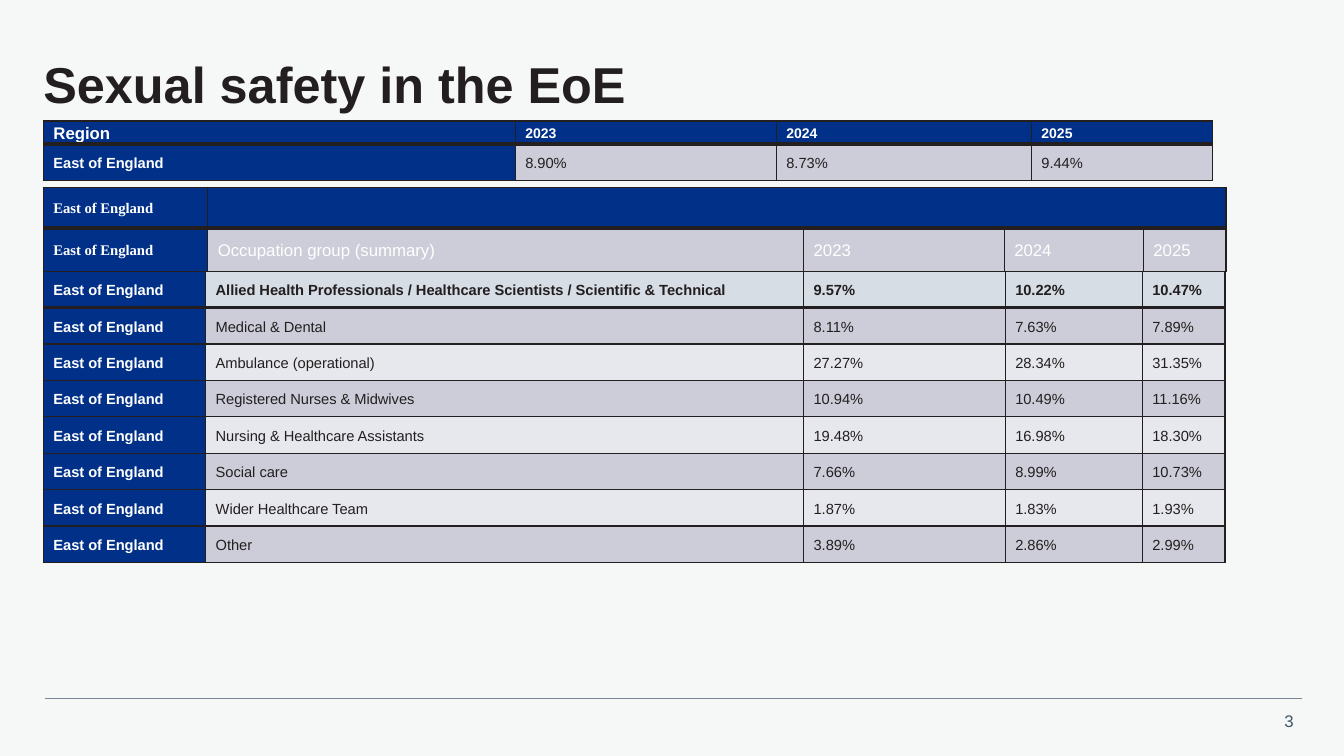
from dataclasses import dataclass

from lxml.etree import SubElement
from pptx import Presentation
from pptx.dml.color import RGBColor
from pptx.enum.shapes import MSO_CONNECTOR
from pptx.enum.text import MSO_ANCHOR, MSO_AUTO_SIZE, PP_ALIGN
from pptx.oxml import parse_xml
from pptx.oxml.ns import nsdecls, qn
from pptx.util import Inches, Pt


@dataclass(frozen=True)
class Theme:
    page: str = "F6F8F8"
    ink: str = "231F20"
    white: str = "FFFFFF"
    blue: str = "003087"
    highlight: str = "D6DDE5"
    dark_band: str = "CCCDD9"
    light_band: str = "E7E8ED"
    rule: str = "768692"
    number: str = "425563"
    font: str = "Arial"
    serif: str = "Times New Roman"
    title: float = 36
    large: float = 12
    body: float = 10.5
    small: float = 10


@dataclass(frozen=True)
class CellStyle:
    fill: str
    color: str = Theme.white
    size: float = Theme.body
    bold: bool = False
    font: str = Theme.font
    pad_y: float = 0.08
    pad_right: float = 0.1


T = Theme()
WIDTH, HEIGHT = 13.33, 7.5
LEFT = 0.43
REGION = "East of England"

REGION_CELL = CellStyle(T.blue, bold=True)
REGION_SERIF = CellStyle(T.blue, bold=True, font=T.serif)
TOP_HEAD = CellStyle(T.blue, size=T.large, bold=True, pad_y=0, pad_right=0.27)
TOP_YEAR = CellStyle(T.blue, size=T.small, bold=True, pad_y=0, pad_right=0.27)
GROUP_HEAD = CellStyle(T.dark_band, size=T.large, pad_y=0.1, pad_right=0.27)
TOP_GROUP = CellStyle(T.highlight, T.ink, bold=True)
DARK = CellStyle(T.dark_band, T.ink)
LIGHT = CellStyle(T.light_band, T.ink)

YEARS = ["2023", "2024", "2025"]
GROUPS = [
    ["Allied Health Professionals / Healthcare Scientists / Scientific & Technical",
     "9.57%", "10.22%", "10.47%"],
    ["Medical & Dental", "8.11%", "7.63%", "7.89%"],
    ["Ambulance (operational)", "27.27%", "28.34%", "31.35%"],
    ["Registered Nurses & Midwives", "10.94%", "10.49%", "11.16%"],
    ["Nursing & Healthcare Assistants", "19.48%", "16.98%", "18.30%"],
    ["Social care", "7.66%", "8.99%", "10.73%"],
    ["Wider Healthcare Team", "1.87%", "1.83%", "1.93%"],
    ["Other", "3.89%", "2.86%", "2.99%"],
]


def rgb(value):
    return RGBColor.from_string(value)


def set_font(p, size, color, bold=False, name=T.font):
    for r in p.runs:
        r.font.size, r.font.bold, r.font.name = Pt(size), bold, name
        r.font.color.rgb = rgb(color)


def set_borders(cell, top, bottom):
    """Draw the four edges; the sides are always 1 pt."""
    tcPr = cell._tc.get_or_add_tcPr()
    edges = {"lnL": 1, "lnR": 1, "lnT": top, "lnB": bottom}
    for i, (tag, width) in enumerate(edges.items()):
        ln = parse_xml(f'<a:{tag} {nsdecls("a")} w="{Pt(width)}"/>')
        fill = SubElement(ln, qn("a:solidFill"))
        SubElement(fill, qn("a:srgbClr"), val=T.ink)
        tcPr.insert(i, ln)


def style_cell(cell, text, style):
    cell.fill.solid()
    cell.fill.fore_color.rgb = rgb(style.fill)
    if not text:
        return
    cell.vertical_anchor = MSO_ANCHOR.MIDDLE
    cell.margin_left, cell.margin_right = Inches(0.1), Inches(style.pad_right)
    cell.margin_top = cell.margin_bottom = Inches(style.pad_y)
    cell.text_frame.text = text
    p = cell.text_frame.paragraphs[0]
    p.line_spacing, p.space_after = 1.15, Pt(8)
    set_font(p, style.size, style.color, style.bold, style.font)


def add_data_table(s, top, widths, heights, rows):
    """Rows hold (text, style) pairs; a heavy line follows the first row."""
    frame = s.shapes.add_table(len(rows), len(widths), Inches(LEFT), Inches(top),
                               Inches(sum(widths)), Inches(sum(heights)))
    table = frame.table
    table.first_row = table.horz_banding = False
    for column, width in zip(table.columns, widths):
        column.width = Inches(width)
    for i, (row, height) in enumerate(zip(rows, heights)):
        table.rows[i].height = Inches(height)
        for j, (text, style) in enumerate(row):
            cell = table.cell(i, j)
            style_cell(cell, text, style)
            set_borders(cell, top=3 if i == 1 else 1, bottom=3 if i == 0 else 1)
    return table


def styled(texts, style):
    return [(text, style) for text in texts]


def add_title(s, text):
    title = s.shapes.title
    title.left, title.top = Inches(LEFT), Inches(0.39)
    title.width, title.height = Inches(12.47), Inches(0.95)
    tf = title.text_frame
    tf.text = text
    tf.auto_size, tf.vertical_anchor = MSO_AUTO_SIZE.NONE, MSO_ANCHOR.MIDDLE
    tf.margin_left = tf.margin_right = tf.margin_top = tf.margin_bottom = 0
    p = tf.paragraphs[0]
    p.alignment, p.line_spacing = PP_ALIGN.LEFT, 0.9
    set_font(p, T.title, T.ink, bold=True)


def add_footer(s, number):
    y = Inches(6.93)
    rule = s.shapes.add_connector(MSO_CONNECTOR.STRAIGHT, Inches(0.45), y,
                                  Inches(12.91), y)
    rule.line.color.rgb, rule.line.width = rgb(T.rule), Pt(0.5)
    SubElement(rule._element.spPr, qn("a:effectLst"))
    tf = s.shapes.add_textbox(Inches(12.52), Inches(7), Inches(0.41),
                              Inches(0.3)).text_frame
    tf.text = number
    tf.word_wrap = False
    p = tf.paragraphs[0]
    p.alignment = PP_ALIGN.RIGHT
    set_font(p, T.large, T.number)


def main():
    prs = Presentation()
    prs.slide_width, prs.slide_height = Inches(WIDTH), Inches(HEIGHT)
    s = prs.slides.add_slide(prs.slide_layouts[5])
    s.background.fill.solid()
    s.background.fill.fore_color.rgb = rgb(T.page)
    add_footer(s, "3")
    add_title(s, "Sexual safety in the EoE")

    add_data_table(s, 1.2, [4.68, 2.59, 2.53, 1.8], [0.22, 0.35], [
        [("Region", TOP_HEAD)] + styled(YEARS, TOP_YEAR),
        [(REGION, REGION_CELL)] + styled(["8.90%", "8.73%", "9.44%"], DARK),
    ])

    heading = add_data_table(s, 1.86, [1.63, 5.91, 1.99, 1.38, 0.82], [0.39, 0.42], [
        [(REGION, REGION_SERIF)] + styled([""] * 4, REGION_CELL),
        [(REGION, REGION_SERIF)]
        + styled(["Occupation group (summary)"] + YEARS, GROUP_HEAD),
    ])
    heading.cell(0, 1).merge(heading.cell(0, 4))

    bands = [TOP_GROUP] + [DARK if i % 2 else LIGHT for i in range(1, len(GROUPS))]
    add_data_table(s, 2.69, [1.61, 5.93, 2, 1.36, 0.82], [0.35] * len(GROUPS), [
        [(REGION, REGION_CELL)] + styled(group, band)
        for group, band in zip(GROUPS, bands)
    ])
    prs.save("out.pptx")


if __name__ == "__main__":
    main()
